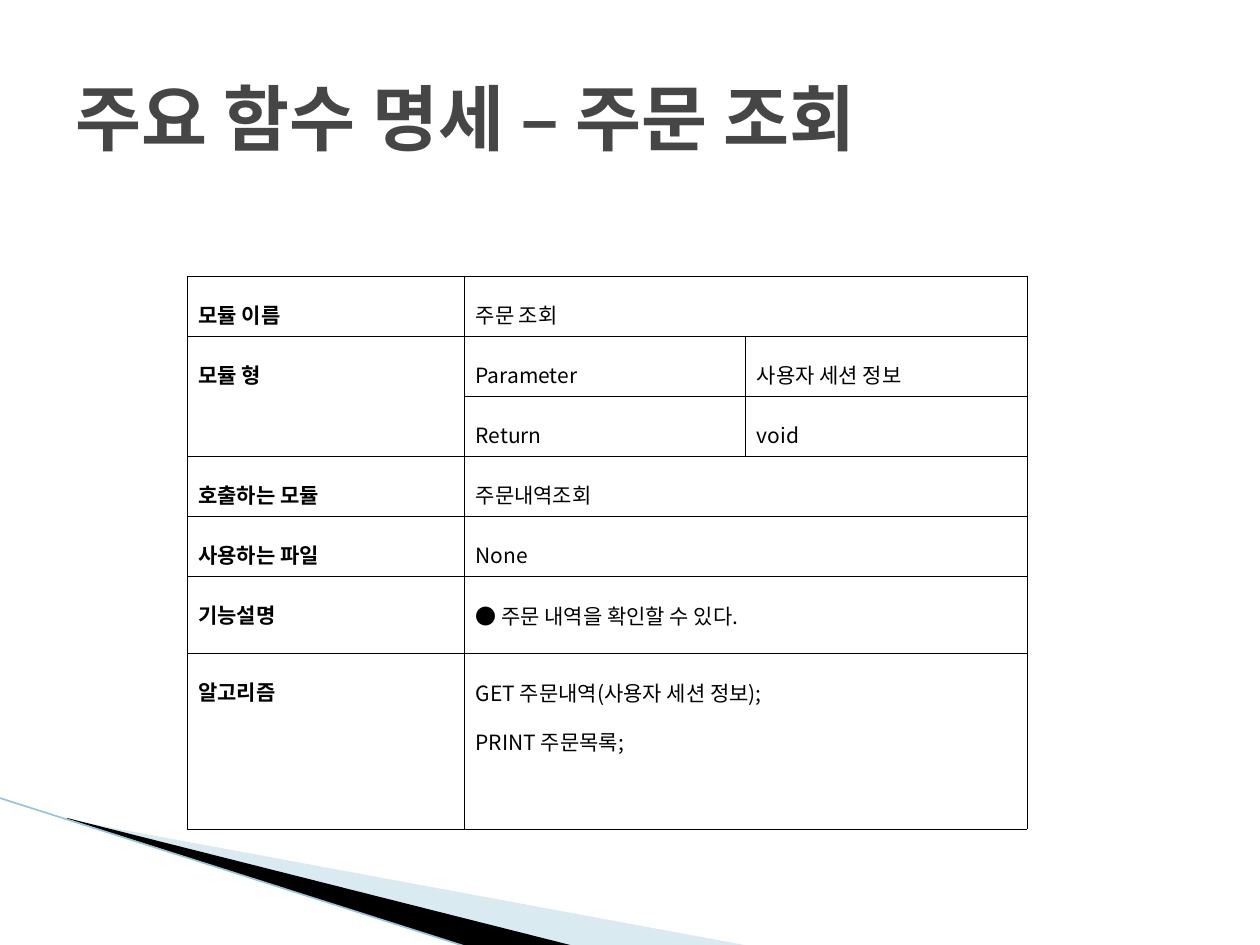
"""Build the function specification slide for the order lookup module."""
from dataclasses import dataclass
from typing import Optional

from lxml.etree import SubElement
from pptx import Presentation
from pptx.dml.color import RGBColor
from pptx.enum.shapes import MSO_CONNECTOR
from pptx.enum.text import MSO_ANCHOR, PP_ALIGN
from pptx.oxml.ns import qn
from pptx.slide import Slide
from pptx.table import _Cell
from pptx.util import Cm, Pt

COLORS = {
    "title": "464646",
    "text": "000000",
    "border": "000000",
    "pale": "A0CBDC",
    "dark": "000000",
    "edge": "97C5D8",
}
HANGUL_FONT = "Noto Sans CJK KR"
TITLE_FORMAT = {"name": "Noto Sans Mono", "size": Pt(41), "bold": True}
CELL_FORMAT = {"name": HANGUL_FONT, "size": Pt(12)}
COLUMN_WIDTHS = (5.59, 5.67, 5.67)
ROW_HEIGHTS = (1.21,) * 5 + (1.55, 3.55)


@dataclass
class Wedge:
    points: tuple[tuple[float, float], ...]
    color: str
    alpha: Optional[int] = None


@dataclass
class Entry:
    row: int
    column: int
    lines: tuple[str, ...]
    rows: int = 1
    columns: int = 1
    padding: float = 0.11


WEDGES = (
    Wedge(((1.4, 16.53), (15.11, 19.07), (11.58, 19.07), (1.4, 16.51)), "pale", 40),
    Wedge(((1.35, 16.49), (11.61, 19.08), (9.45, 19.1), (1.37, 16.51)), "dark"),
)
ENTRIES = (
    Entry(0, 0, ("모듈 이름",)),
    Entry(0, 1, ("주문 조회",), columns=2),
    Entry(1, 0, ("모듈 형",), rows=2),
    Entry(1, 1, ("Parameter",)),
    Entry(1, 2, ("사용자 세션 정보",)),
    Entry(2, 1, ("Return",)),
    Entry(2, 2, ("void",)),
    Entry(3, 0, ("호출하는 모듈",)),
    Entry(3, 1, ("주문내역조회",), columns=2),
    Entry(4, 0, ("사용하는 파일",)),
    Entry(4, 1, ("None",), columns=2),
    Entry(5, 0, ("기능설명",)),
    Entry(5, 1, ("● 주문 내역을 확인할 수 있다.",), columns=2, padding=0.13),
    Entry(6, 0, ("알고리즘",)),
    Entry(6, 1, ("GET 주문내역(사용자 세션 정보);", "PRINT 주문목록;"), columns=2, padding=0.13),
)


def color(name: str) -> RGBColor:
    return RGBColor.from_string(COLORS[name])


def format_span(span, values: dict, color_name: str) -> None:
    for key, value in values.items():
        setattr(span.font, key, value)
    span.font.color.rgb = color(color_name)
    SubElement(span.font._element, qn("a:ea"), typeface=HANGUL_FONT)


def draw_wedge(page: Slide, wedge: Wedge) -> None:
    points = [(Cm(x), Cm(y)) for x, y in wedge.points]
    builder = page.shapes.build_freeform(*points[0])
    builder.add_line_segments(points[1:])
    shape = builder.convert_to_shape()
    shape.shadow.inherit = False
    shape.line.fill.background()
    shape.fill.solid()
    shape.fill.fore_color.rgb = color(wedge.color)
    if wedge.alpha is not None:
        tint = shape._element.spPr.find(f"{qn('a:solidFill')}/{qn('a:srgbClr')}")
        SubElement(tint, qn("a:alpha"), val=str(wedge.alpha * 1000))


def draw_edge(page: Slide) -> None:
    edge = page.shapes.add_connector(
        MSO_CONNECTOR.STRAIGHT, Cm(-0.03), Cm(16.08), Cm(9.45), Cm(19.1)
    )
    edge.line.color.rgb = color("edge")
    edge.line.width = Pt(0.95)
    SubElement(edge._element.spPr, qn("a:effectLst"))


def write_title(page: Slide, text: str) -> None:
    box = page.shapes.title
    box.left, box.top, box.width, box.height = Cm(1.27), Cm(0.76), Cm(22.86), Cm(3.18)
    box.text_frame.vertical_anchor = MSO_ANCHOR.MIDDLE
    para = box.text_frame.paragraphs[0]
    para.alignment = PP_ALIGN.LEFT
    span = para.add_run()
    span.text = text
    format_span(span, TITLE_FORMAT, "title")


def style_cell(cell: _Cell) -> None:
    properties = cell._tc.get_or_add_tcPr()
    for side in ("lnL", "lnR", "lnT", "lnB"):
        border = SubElement(properties, qn(f"a:{side}"), w=str(Pt(0.25)))
        fill = SubElement(border, qn("a:solidFill"))
        SubElement(fill, qn("a:srgbClr"), val=COLORS["border"])
    cell.fill.background()


def write_entry(cell: _Cell, entry: Entry) -> None:
    cell.margin_left = cell.margin_right = Cm(0.23)
    cell.margin_top = cell.margin_bottom = Cm(entry.padding)
    frame = cell.text_frame
    for index, line in enumerate(entry.lines):
        para = frame.add_paragraph() if index else frame.paragraphs[0]
        para.alignment = PP_ALIGN.JUSTIFY
        para.line_spacing = 1.6
        span = para.add_run()
        span.text = line
        format_span(span, CELL_FORMAT | {"bold": entry.column == 0}, "text")


def draw_table(page: Slide) -> None:
    table = page.shapes.add_table(
        len(ROW_HEIGHTS), len(COLUMN_WIDTHS), Cm(3.77), Cm(5.56),
        Cm(sum(COLUMN_WIDTHS)), Cm(sum(ROW_HEIGHTS)),
    ).table
    table.first_row = table.horz_banding = False
    for column, width in zip(table.columns, COLUMN_WIDTHS):
        column.width = Cm(width)
    for row, height in zip(table.rows, ROW_HEIGHTS):
        row.height = Cm(height)
    for cell in table.iter_cells():
        style_cell(cell)
    for entry in ENTRIES:
        cell = table.cell(entry.row, entry.column)
        if entry.rows > 1 or entry.columns > 1:
            cell.merge(table.cell(entry.row + entry.rows - 1, entry.column + entry.columns - 1))
        write_entry(cell, entry)


def main() -> None:
    deck = Presentation()
    deck.slide_width, deck.slide_height = Cm(25.4), Cm(19.05)
    page = deck.slides.add_slide(deck.slide_layouts[5])
    for wedge in WEDGES:
        draw_wedge(page, wedge)
    draw_edge(page)
    write_title(page, "주요 함수 명세 – 주문 조회")
    draw_table(page)
    deck.save("out.pptx")


if __name__ == "__main__":
    main()
